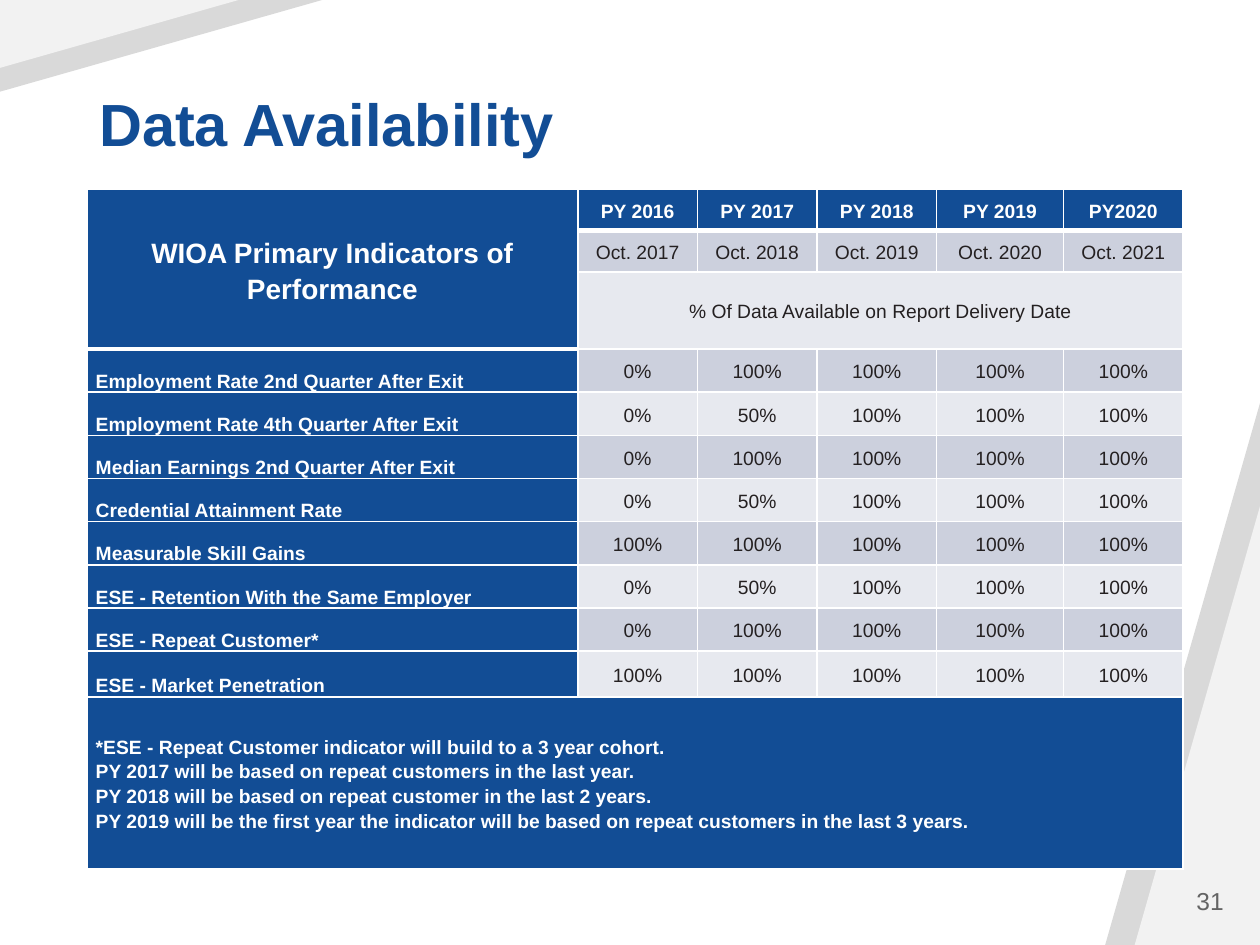
from lxml.etree import SubElement
from pptx import Presentation
from pptx.dml.color import RGBColor
from pptx.enum.shapes import MSO_SHAPE
from pptx.enum.text import MSO_ANCHOR, PP_ALIGN
from pptx.oxml.ns import qn
from pptx.util import Cm, Pt

COLORS = {
    "blue": "124D95", "white": "FFFFFF", "ink": "242021", "number": "646464",
    "band dark": "CCD0DD", "band light": "E7E9EF",
    "grey": "D9D9D9", "pale": "F2F2F2",
}
YEARS = ["PY 2016", "PY 2017", "PY 2018", "PY 2019", "PY2020"]
DELIVERY_DATES = ["Oct. 2017", "Oct. 2018", "Oct. 2019", "Oct. 2020", "Oct. 2021"]
# Share available in the first two years; every later year is 100%.
INDICATORS = [
    ("Employment Rate 2nd Quarter After Exit", 0, 100),
    ("Employment Rate 4th Quarter After Exit", 0, 50),
    ("Median Earnings 2nd Quarter After Exit", 0, 100),
    ("Credential Attainment Rate", 0, 50),
    ("Measurable Skill Gains", 100, 100),
    ("ESE - Retention With the Same Employer", 0, 50),
    ("ESE - Repeat Customer*", 0, 100),
    ("ESE - Market Penetration", 100, 100),
]
FOOTNOTE = """*ESE - Repeat Customer indicator will build to a 3 year cohort.
PY 2017 will be based on repeat customers in the last year.
PY 2018 will be based on repeat customer in the last 2 years.
PY 2019 will be the first year the indicator will be based on repeat customers in the last 3 years."""
COLUMN_WIDTHS = [9.9, 2.41, 2.41, 2.41, 2.56, 2.41]
ROW_HEIGHTS = [0.83] * 3 + [0.87] * 7 + [0.92, 3.47]


def color(name):
    return RGBColor.from_string(COLORS[name])


def write(frame, text, *, size, ink, bold=False, align=PP_ALIGN.LEFT, spacing=1.0):
    """Fill the first paragraph, with a line break at each newline."""
    para = frame.paragraphs[0]
    para.alignment = align
    para.line_spacing = spacing
    for index, line in enumerate(text.split("\n")):
        if index:
            para.add_line_break()
        span = para.add_run()
        span.text = line
        span.font.name = "Arial"
        span.font.size = Pt(size)
        span.font.bold = bold
        span.font.color.rgb = color(ink)


def add_text(page, box, text, anchor, **style):
    frame = page.shapes.add_textbox(*map(Cm, box)).text_frame
    frame.word_wrap = True
    frame.vertical_anchor = anchor
    write(frame, text, **style)


def add_corner(page, box, share, turned=False):
    """Nest a pale right triangle in a grey one; turned puts it at the top left."""
    left, top, width, height = box
    group = page.shapes.add_group_shape()
    for scale, fill in ((1, "grey"), (share, "pale")):
        w, h = width * scale, height * scale
        if turned:
            x, y = left + (h - w) / 2, top + (w - h) / 2
        else:
            x, y = left + width - w, top + height - h
        triangle = group.shapes.add_shape(
            MSO_SHAPE.ISOSCELES_TRIANGLE, Cm(x), Cm(y), Cm(w), Cm(h))
        triangle.adjustments[0] = 1
        triangle.shadow.inherit = False
        triangle.fill.solid()
        triangle.fill.fore_color.rgb = color(fill)
        triangle.line.fill.background()
        if turned:
            triangle.rotation = 270
            triangle.element.spPr.xfrm.set("flipV", "1")


def set_borders(cell, bottom):
    properties = cell._tc.get_or_add_tcPr()
    for index, side in enumerate(("lnL", "lnR", "lnT", "lnB")):
        points = bottom if side == "lnB" else 1
        line = properties.makeelement(qn(f"a:{side}"), {"w": str(Pt(points))})
        solid = SubElement(line, qn("a:solidFill"))
        SubElement(solid, qn("a:srgbClr"), val=COLORS["white"])
        properties.insert(index, line)


def fill_cell(cell, text, fill, *, size=11, align=PP_ALIGN.CENTER,
              anchor=MSO_ANCHOR.MIDDLE, bottom=1):
    cell.margin_left = cell.margin_right = Cm(0.18)
    cell.margin_top = cell.margin_bottom = 0
    cell.vertical_anchor = anchor
    cell.fill.solid()
    cell.fill.fore_color.rgb = color(fill)
    set_borders(cell, bottom)
    on_blue = fill == "blue"
    write(cell.text_frame, text, size=size, ink="white" if on_blue else "ink",
          bold=on_blue, align=align, spacing=1.15)


def add_availability_table(page, left, top):
    table = page.shapes.add_table(
        len(ROW_HEIGHTS), len(COLUMN_WIDTHS), Cm(left), Cm(top),
        Cm(sum(COLUMN_WIDTHS)), Cm(sum(ROW_HEIGHTS))).table
    for column, width in zip(table.columns, COLUMN_WIDTHS):
        column.width = Cm(width)
    for row, height in zip(table.rows, ROW_HEIGHTS):
        row.height = Cm(height)

    last_row, last_column = len(ROW_HEIGHTS) - 1, len(COLUMN_WIDTHS) - 1
    table.cell(0, 0).merge(table.cell(2, 0))
    table.cell(2, 1).merge(table.cell(2, last_column))
    table.cell(last_row, 0).merge(table.cell(last_row, last_column))

    fill_cell(table.cell(0, 0), "WIOA Primary Indicators of Performance", "blue",
              size=16, bottom=3)
    for column, (year, date) in enumerate(zip(YEARS, DELIVERY_DATES), start=1):
        fill_cell(table.cell(0, column), year, "blue", bottom=3)
        fill_cell(table.cell(1, column), date, "band dark")
    fill_cell(table.cell(2, 1), "% Of Data Available on Report Delivery Date", "band light")

    for row, (label, *shares) in enumerate(INDICATORS, start=3):
        fill_cell(table.cell(row, 0), label, "blue", align=PP_ALIGN.LEFT,
                  anchor=MSO_ANCHOR.BOTTOM)
        band = "band dark" if row % 2 else "band light"
        for column, share in enumerate(shares + [100] * 3, start=1):
            fill_cell(table.cell(row, column), f"{share}%", band)
    fill_cell(table.cell(last_row, 0), FOOTNOTE, "blue", align=PP_ALIGN.LEFT)


def build_page(deck):
    page = deck.slides.add_slide(deck.slide_layouts[6])
    add_corner(page, (22.28, 8.13, 3.12, 10.92), 0.81)
    add_corner(page, (0, 0, 1.85, 6.5), 0.74, turned=True)
    add_text(page, (1.75, 0.41, 22.1, 2.92), "Data Availability", MSO_ANCHOR.BOTTOM,
             size=34, ink="blue", bold=True, spacing=0.9)
    add_text(page, (21.36, 17.65, 3.56, 1.02), "31", MSO_ANCHOR.MIDDLE,
             size=14, ink="number", align=PP_ALIGN.RIGHT)
    add_availability_table(page, 1.75, 3.82)


def main():
    deck = Presentation()
    deck.slide_width, deck.slide_height = Cm(25.4), Cm(19.05)
    build_page(deck)
    deck.save("out.pptx")


if __name__ == "__main__":
    main()
